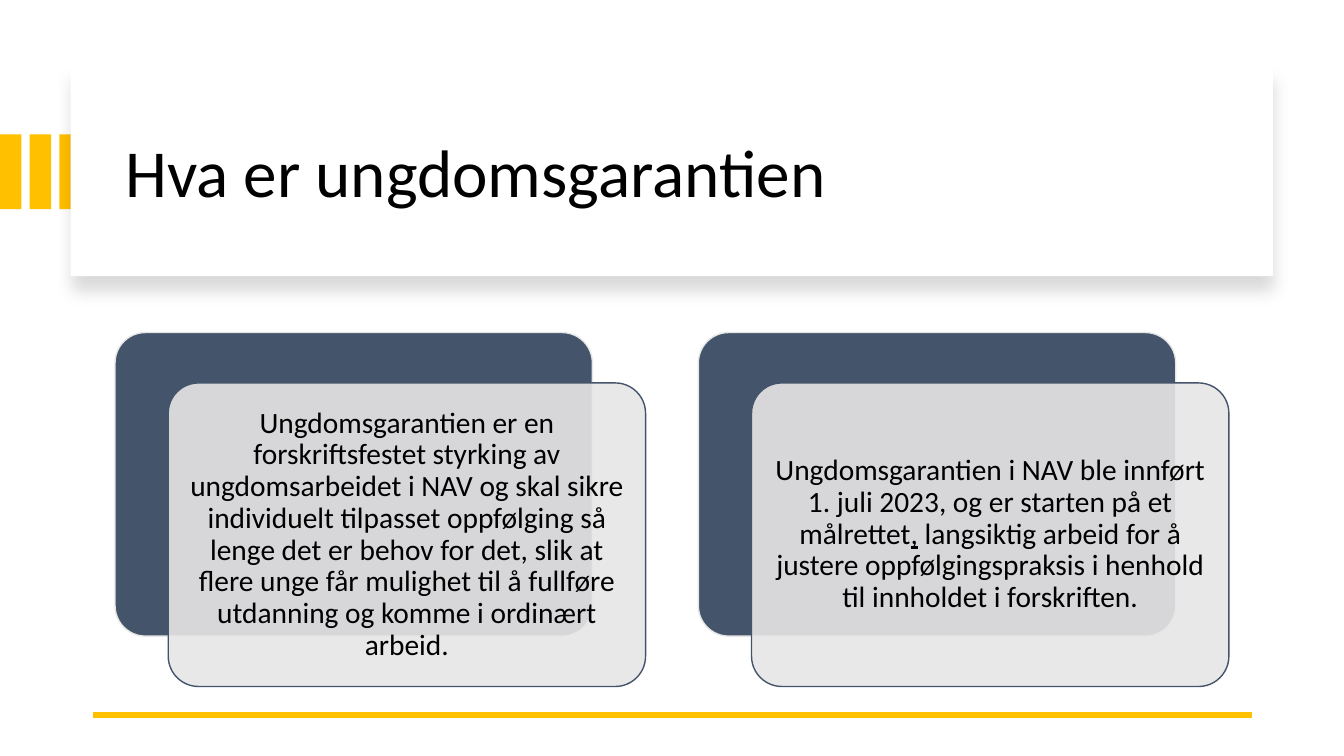
from lxml import etree
from pptx import Presentation
from pptx.dml.color import RGBColor
from pptx.enum.shapes import MSO_CONNECTOR, MSO_SHAPE
from pptx.enum.text import MSO_ANCHOR, PP_ALIGN
from pptx.oxml.ns import qn
from pptx.util import Cm, Pt

RECTANGLE = MSO_SHAPE.RECTANGLE
ROUNDED = MSO_SHAPE.ROUNDED_RECTANGLE
STRAIGHT = MSO_CONNECTOR.STRAIGHT
MIDDLE = MSO_ANCHOR.MIDDLE
LEFT, CENTER = PP_ALIGN.LEFT, PP_ALIGN.CENTER

FONT = "Calibri"
BLACK, WHITE, YELLOW, SLATE, GREY = "000000", "FFFFFF", "FFC000", "44546A", "E7E6E6"
TITLE_ONLY = 5

# Each card text is a list of (text, underlined) runs.
CARDS = [
    [("Ungdomsgarantien er en forskriftsfestet styrking av ungdomsarbeidet i NAV "
      "og skal sikre individuelt tilpasset oppfølging så lenge det er behov for det, "
      "slik at flere unge får mulighet til å fullføre utdanning og komme i "
      "ordinært arbeid.", False)],
    [("Ungdomsgarantien i NAV ble innført 1. juli 2023, og er starten på et "
      "målrettet", False),
     (",", True),
     (" langsiktig arbeid for å justere oppfølgingspraksis i henhold til "
      "innholdet i forskriften.", False)],
]


def color(value):
    return RGBColor.from_string(value)


def add_block(page, kind, left, top, width, height, fill, line=None):
    block = page.shapes.add_shape(kind, Cm(left), Cm(top), Cm(width), Cm(height))
    block.shadow.inherit = False
    block.fill.solid()
    block.fill.fore_color.rgb = color(fill)
    if line:
        block.line.color.rgb = color(line)
        block.line.width = Pt(1)
    else:
        block.line.fill.background()
    return block


def write(box, runs, size, align):
    frame = box.text_frame
    frame.word_wrap = True
    frame.vertical_anchor = MIDDLE
    para = frame.paragraphs[0]
    para.alignment = align
    para.line_spacing = 0.9
    for text, underlined in runs:
        span = para.add_run()
        span.text = text
        span.font.name = FONT
        span.font.size = Pt(size)
        span.font.color.rgb = color(BLACK)
        if underlined:
            span.font.underline = True


def add_soft_shadow(block):
    effects = block.element.spPr.find(qn("a:effectLst"))
    shadow = etree.SubElement(effects, qn("a:outerShdw"), blurRad=str(Pt(11)),
                              dist=str(Pt(10)), dir="5400000", algn="t", rotWithShape="0")
    shade = etree.SubElement(shadow, qn("a:srgbClr"), val=BLACK)
    etree.SubElement(shade, qn("a:alpha"), val="15000")


def set_opacity(block, percent):
    shade = block.element.spPr.find(qn("a:solidFill")).find(qn("a:srgbClr"))
    etree.SubElement(shade, qn("a:alpha"), val=str(percent * 1000))


def add_stripes(page, left, top, count=3, width=0.54, height=1.88, pitch=0.75):
    for index in range(count):
        add_block(page, RECTANGLE, left + index * pitch, top, width, height, YELLOW)


def add_header(page, left, top, width, height):
    panel = add_block(page, RECTANGLE, left, top, width, height, WHITE)
    add_soft_shadow(panel)
    title = page.shapes.title
    title.left, title.top = Cm(left + 1.12), Cm(top + 0.56)
    title.width, title.height = Cm(width - 2.03), Cm(height - 0.94)
    write(title, [("Hva er ungdomsgarantien", False)], 48, LEFT)
    panel.element.addnext(title.element)


def add_card(page, left, top, width, height, runs):
    """Draw a dark card with a translucent text card shifted down and right."""
    shift_x, shift_y = 1.34, 1.27
    size = width - shift_x, height - shift_y
    back = add_block(page, ROUNDED, left, top, *size, SLATE, GREY)
    front = add_block(page, ROUNDED, left + shift_x, top + shift_y, *size, GREY, SLATE)
    for block in (back, front):
        block.adjustments[0] = 0.1
    set_opacity(front, 90)
    frame = front.text_frame
    frame.margin_left = frame.margin_right = Cm(0.23)
    frame.margin_top = frame.margin_bottom = Cm(0.23)
    write(front, runs, 21, CENTER)


def add_cards(page, left, top, width, height, gap=1.33):
    card_width = (width - gap * (len(CARDS) - 1)) / len(CARDS)
    for index, runs in enumerate(CARDS):
        add_card(page, left + index * (card_width + gap), top, card_width, height, runs)


def add_footer_rule(page, left, top, width):
    rule = page.shapes.add_connector(STRAIGHT, Cm(left + width), Cm(top), Cm(left), Cm(top))
    rule.line.color.rgb = color(YELLOW)
    rule.line.width = Pt(4.5)
    etree.SubElement(rule.element.spPr, qn("a:effectLst"))


def main():
    deck = Presentation()
    deck.slide_width, deck.slide_height = Cm(33.87), Cm(19.05)
    page = deck.slides.add_slide(deck.slide_layouts[TITLE_ONLY])
    add_stripes(page, 0, 3.39)
    add_header(page, 1.78, 1.7, 30.3, 5.26)
    add_footer_rule(page, 2.34, 18.01, 29.21)
    add_cards(page, 2.9, 8.38, 28.07, 8.92)
    deck.save("out.pptx")


if __name__ == "__main__":
    main()
